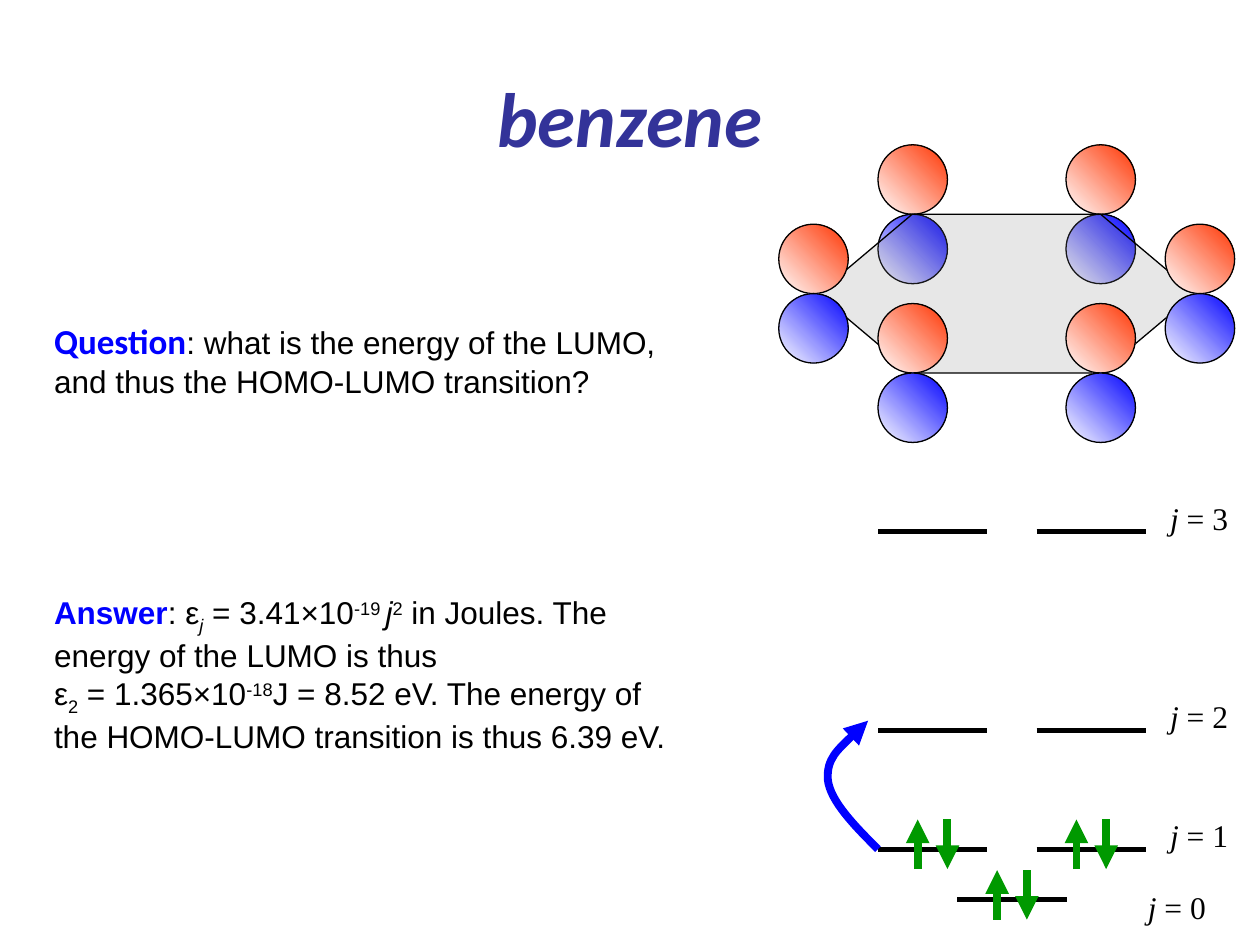
from lxml.etree import SubElement
from pptx import Presentation
from pptx.dml.color import RGBColor
from pptx.enum.shapes import MSO_CONNECTOR as CONNECTOR, MSO_SHAPE as SHAPE
from pptx.enum.text import MSO_ANCHOR as ANCHOR, MSO_AUTO_SIZE as AUTO_SIZE, PP_ALIGN as ALIGN
from pptx.oxml.ns import qn
from pptx.util import Cm, Pt

BLACK = RGBColor(0x00, 0x00, 0x00)
WHITE = RGBColor(0xFF, 0xFF, 0xFF)
GREY = RGBColor(0x80, 0x80, 0x80)
INDIGO = RGBColor(0x33, 0x33, 0x99)
BLUE = RGBColor(0x00, 0x00, 0xFF)
RED = RGBColor(0xFF, 0x33, 0x00)
GREEN = RGBColor(0x00, 0x99, 0x00)

HEADING = {"bold": True, "color": BLUE}
ITALIC = {"italic": True}
SUB = {"baseline": -25}
SUPER = {"baseline": 30}
QUESTION = [[
    ("Question", {**HEADING, "name": "Calibri", "size": Pt(20)}),
    (": what is the energy of the LUMO, and thus the HOMO-LUMO transition?", {}),
]]
ANSWER = [
    [("Answer", HEADING), (": ε", {}), ("j", {**ITALIC, **SUB}),
     (" = 3.41×10", {}), ("-19 ", SUPER), ("j", ITALIC), ("2", SUPER),
     (" in Joules. The energy of the LUMO is thus", {})],
    [("ε", {}), ("2", SUB), (" = 1.365×10", {}), ("-18", SUPER),
     ("J = 8.52 eV. The energy of the HOMO-LUMO transition is thus 6.39 eV.", {})],
]


def add_title(slide, left, top, width, height):
    """Place and format the slide title."""
    title = slide.shapes.title
    title.left, title.top, title.width, title.height = map(Cm, (left, top, width, height))
    title.text_frame.text = "benzene"
    title.text_frame.vertical_anchor = ANCHOR.MIDDLE
    heading = title.text_frame.paragraphs[0]
    heading.alignment = ALIGN.CENTER
    font = heading.font
    font.name, font.size, font.bold, font.italic = "Calibri", Pt(44), True, True
    font.color.rgb = INDIGO


def add_text(shapes, left, top, width, height, paragraphs, font_name="Arial", wrap=True):
    """Add a text box of paragraphs made of (wording, format) runs."""
    frame = shapes.add_textbox(*map(Cm, (left, top, width, height))).text_frame
    frame.word_wrap = wrap
    frame.auto_size = AUTO_SIZE.SHAPE_TO_FIT_TEXT
    for index, pieces in enumerate(paragraphs):
        paragraph = frame.add_paragraph() if index else frame.paragraphs[0]
        paragraph.font.name, paragraph.font.size = font_name, Pt(18)
        paragraph.font.color.rgb = BLACK
        for wording, style in pieces:
            run = paragraph.add_run()
            run.text = wording
            for key, value in style.items():
                if key == "color":
                    run.font.color.rgb = value
                elif key == "baseline":
                    run._r.get_or_add_rPr().set("baseline", str(value * 1000))
                else:
                    setattr(run.font, key, value)


def outline(shape, color, weight, arrow=False):
    """Give a shape its line and, if asked, an arrowhead at its end."""
    shape.line.color.rgb = color
    shape.line.width = Pt(weight)
    if arrow:
        SubElement(shape._element.spPr.find(qn("a:ln")), qn("a:tailEnd"), type="triangle")


def add_line(shapes, start, end, color, weight, arrow=False):
    """Add a straight line between two points."""
    line = shapes.add_connector(CONNECTOR.STRAIGHT, *map(Cm, (*start, *end)))
    outline(line, color, weight, arrow)
    SubElement(line._element.spPr, qn("a:effectLst"))


def add_orbital(shapes, left, top, diameter):
    """Add a p orbital: a red lobe standing on a blue one."""
    for row, color in enumerate((RED, BLUE)):
        lobe = shapes.add_shape(
            SHAPE.OVAL, Cm(left), Cm(top + row * diameter), Cm(diameter), Cm(diameter))
        lobe.shadow.inherit = False
        lobe.fill.gradient()
        lobe.fill.gradient_angle = 45
        for stop, shade in zip(lobe.fill.gradient_stops, (WHITE, color)):
            stop.color.rgb = shade
        for stop, position in zip(lobe.fill.gradient_stops, (0, 1)):
            stop.position = position
        outline(lobe, BLACK, 0.75)


def add_molecule(slide, left, top):
    """Draw the benzene ring with its six p orbitals."""
    shapes = slide.shapes.add_group_shape().shapes
    diameter, step = 1.4, 1.6
    for x in (2, 5.79):
        add_orbital(shapes, left + x, top, diameter)
    ring = shapes.add_shape(
        SHAPE.HEXAGON, Cm(left + 0.79), Cm(top + diameter), Cm(7.6), Cm(2 * step))
    ring.adjustments[0] = 0.594
    ring.shadow.inherit = False
    ring.fill.solid()
    ring.fill.fore_color.rgb = GREY
    SubElement(ring._element.spPr.find(qn("a:solidFill"))[0], qn("a:alpha"), val="19000")
    outline(ring, BLACK, 0.75)
    for x, row in ((0, 1), (2, 2), (5.79, 2), (7.79, 1)):
        add_orbital(shapes, left + x, top + row * step, diameter)


def add_transition(slide, left, top):
    """Draw the curved arrow from the HOMO up to the LUMO."""
    bends = [(-0.48, -0.48), (-0.96, -0.97), (-1.01, -1.4),
             (-1.04, -1.83), (-0.61, -2.21), (-0.2, -2.59)]
    builder = slide.shapes.build_freeform(Cm(left), Cm(top))
    builder.add_line_segments([(Cm(left + x), Cm(top + y)) for x, y in bends], close=False)
    curve = builder.convert_to_shape()
    curve.shadow.inherit = False
    curve.fill.background()
    outline(curve, BLUE, 4.5, arrow=True)
    track = next(curve._element.iter(qn("a:path")))
    segments = track.findall(qn("a:lnTo"))
    for first in range(0, len(segments), 3):
        bezier = SubElement(track, qn("a:cubicBezTo"))
        for segment in segments[first:first + 3]:
            bezier.append(segment[0])
            track.remove(segment)


def add_level(slide, y, starts, filled):
    """Draw one energy level and the electron pairs that fill it."""
    shapes = slide.shapes
    lines = shapes.add_group_shape().shapes if len(starts) > 1 else shapes
    for x in starts:
        add_line(lines, (x, y), (x + 2.2, y), BLACK, 3)
    if filled:
        for x in starts:
            bottom, tip = y + 0.4, y - 0.6
            add_line(shapes, (x + 0.8, bottom), (x + 0.8, tip), GREEN, 4.5, arrow=True)
            add_line(shapes, (x + 1.4, tip), (x + 1.4, bottom), GREEN, 4.5, arrow=True)


def add_level_diagram(slide, left, top):
    """Draw the labelled energy levels, electrons and transition."""
    pair = (left, left + 3.2)
    levels = [
        (0, 8.21, (left + 1.6,), (5.19, 7.85)),
        (1, 7.19, pair, (5.64, 6.4)),
        (2, 4.8, pair, (5.64, 4)),
        (3, 0.79, pair, (5.64, 0)),
    ]
    for j, y, starts, (label_x, label_y) in levels:
        add_level(slide, top + y, starts, filled=j < 2)
        add_text(slide.shapes, left + label_x, top + label_y, 1.68, 1.02,
                 [[("j", ITALIC), (f" = {j}", {})]], "Times New Roman", wrap=False)
    add_transition(slide, left, top + 7.19)


def main():
    """Build and save the benzene slide."""
    deck = Presentation()
    deck.slide_width, deck.slide_height = Cm(25.4), Cm(19.05)
    slide = deck.slides.add_slide(deck.slide_layouts[5])
    add_title(slide, 1.27, 0.76, 22.86, 3.18)
    add_text(slide.shapes, 0.84, 6.32, 13.67, 2.62, QUESTION)
    add_molecule(slide, 15.7, 2.92)
    add_level_diagram(slide, 17.7, 9.93)
    add_text(slide.shapes, 0.84, 11.84, 13.06, 3.3, ANSWER)
    deck.save("out.pptx")


if __name__ == "__main__":
    main()
